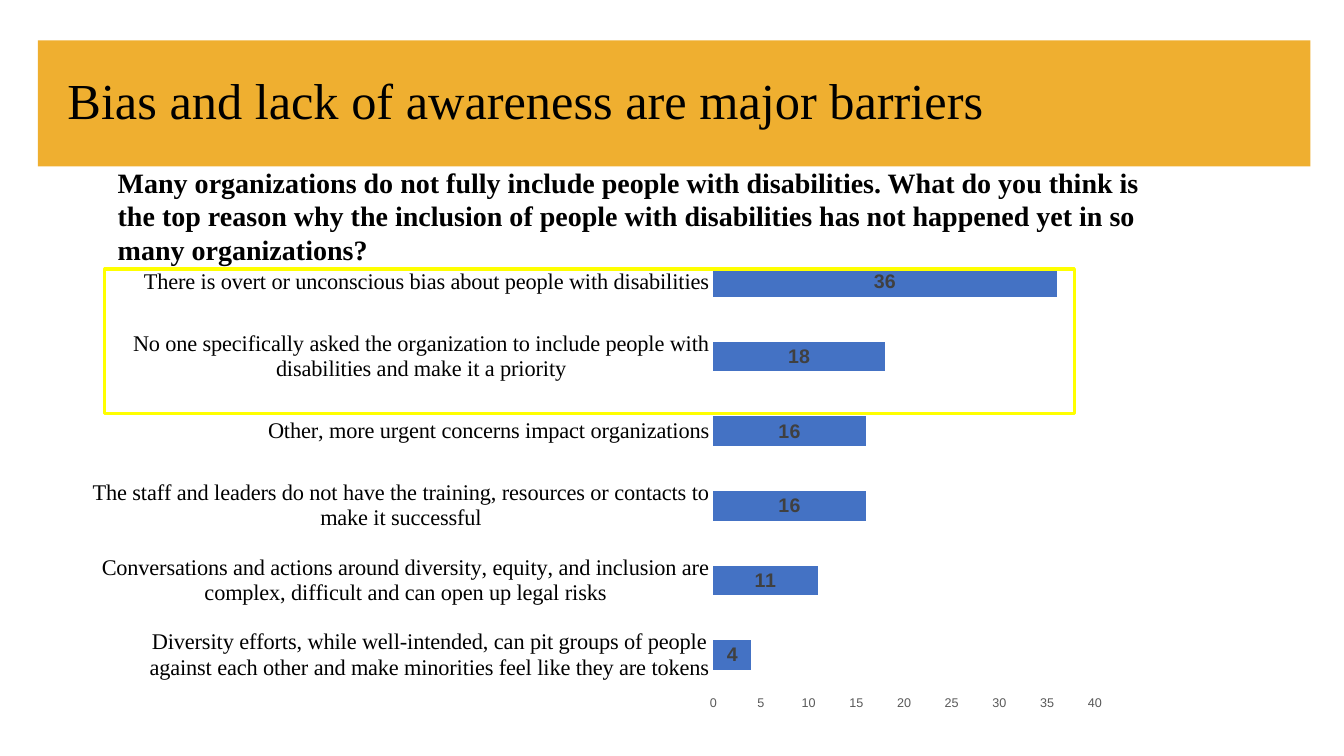
from lxml import etree
from pptx import Presentation
from pptx.chart.data import CategoryChartData
from pptx.dml.color import RGBColor
from pptx.enum.chart import XL_CHART_TYPE, XL_LABEL_POSITION, XL_TICK_MARK
from pptx.enum.shapes import MSO_SHAPE
from pptx.enum.text import MSO_ANCHOR, PP_ALIGN
from pptx.util import Pt

BAR = XL_CHART_TYPE.BAR_STACKED
MID = XL_LABEL_POSITION.CENTER
NONE = XL_TICK_MARK.NONE
RECT = MSO_SHAPE.RECTANGLE
SERIF, SANS = "Times New Roman", "Arial"
HUES = {"band": "EFAF30", "text": "000000", "bar": "4472C4",
        "label": "404040", "axis": "595959", "frame": "FFFF00"}
C_NS = "http://schemas.openxmlformats.org/drawingml/2006/chart"

TITLE = "Bias and lack of awareness are major barriers"
ASK = ("Many organizations do not fully include people with disabilities. "
       "What do you think is the top reason why the inclusion of people with "
       "disabilities has not happened yet in so many organizations?")
VOTES = [
    ("Diversity efforts, while well-intended, can pit groups of people "
     "against each other and make minorities feel like they are tokens", 4),
    ("Conversations and actions around diversity, equity, and inclusion are "
     "complex, difficult and can open up legal risks", 11),
    ("The staff and leaders do not have the training, resources or contacts "
     "to make it successful", 16),
    ("Other, more urgent concerns impact organizations", 16),
    ("No one specifically asked the organization to include people with "
     "disabilities and make it a priority", 18),
    ("There is overt or unconscious bias about people with disabilities", 36),
]


def hue(name):
    return RGBColor.from_string(HUES[name])


def style(font, size, face, color, bold=False):
    font.size, font.name, font.bold = Pt(size), face, bold
    font.color.rgb = hue(color)


def place(shape, x, y, w, h):
    shape.left, shape.top = Pt(x), Pt(y)
    shape.width, shape.height = Pt(w), Pt(h)


def add_rect(slide, x, y, w, h):
    rect = slide.shapes.add_shape(RECT, Pt(x), Pt(y), Pt(w), Pt(h))
    rect.shadow.inherit = False
    return rect


def add_head(slide, x, y, w, h):
    # Band, moved behind the title
    band = add_rect(slide, x, y, w, h)
    band.fill.solid()
    band.fill.fore_color.rgb = hue("band")
    band.line.fill.background()
    slide.shapes._spTree.insert(2, band._element)
    # Title
    title = slide.shapes.title
    place(title, x + 14, y, w - 81, h)
    frame = title.text_frame
    frame.text = TITLE
    frame.vertical_anchor = MSO_ANCHOR.MIDDLE
    para = frame.paragraphs[0]
    para.alignment = PP_ALIGN.LEFT
    para.line_spacing = 0.9
    style(para.runs[0].font, 36, SERIF, "text")


def add_ask(slide, x, y, w, h):
    box = slide.shapes.add_textbox(Pt(x), Pt(y), Pt(w), Pt(h))
    frame = box.text_frame
    frame.word_wrap = True
    frame.margin_right = Pt(92)
    frame.text = ASK
    para = frame.paragraphs[0]
    para._p.get_or_add_pPr().set("marL", str(Pt(36)))
    para.space_after = Pt(12)
    style(para.runs[0].font, 20, SERIF, "text", True)


def fix_plot(chart, **parts):
    # Inner plot area as shares of the chart box
    area = chart._chartSpace.chart.plotArea
    for old in area.findall(f"{{{C_NS}}}layout"):
        area.remove(old)
    layout = etree.Element(f"{{{C_NS}}}layout")
    manual = etree.SubElement(layout, f"{{{C_NS}}}manualLayout")
    rules = {"layoutTarget": "inner", "xMode": "edge", "yMode": "edge", **parts}
    for tag, val in rules.items():
        etree.SubElement(manual, f"{{{C_NS}}}{tag}").set("val", str(val))
    area.insert(0, layout)


def add_bars(slide, x, y, w, h):
    data = CategoryChartData()
    data.categories = [name for name, _ in VOTES]
    data.add_series("Series 1", [val for _, val in VOTES])
    chart = slide.shapes.add_chart(BAR, Pt(x), Pt(y), Pt(w), Pt(h), data).chart
    chart.has_title = chart.has_legend = False
    style(chart.font, 10, SANS, "text")
    fix_plot(chart, x=0.6, y=0.02, w=0.37, h=0.92)
    # Bars and labels
    plot = chart.plots[0]
    plot.gap_width, plot.overlap = 150, 100
    plot.vary_by_categories = False
    fill = plot.series[0].format.fill
    fill.solid()
    fill.fore_color.rgb = hue("bar")
    labels = plot.series[0].data_labels
    labels.show_value = True
    labels.position = MID
    style(labels.font, 14, SANS, "label", True)
    # Axes
    cats, vals = chart.category_axis, chart.value_axis
    for axis in (cats, vals):
        axis.major_tick_mark = axis.minor_tick_mark = NONE
        axis.has_major_gridlines = False
        axis.format.line.fill.background()
    style(cats.tick_labels.font, 16, SERIF, "text")
    style(vals.tick_labels.font, 9, SANS, "axis")
    vals.minimum_scale, vals.maximum_scale, vals.major_unit = 0, 40, 5


def add_frame(slide, x, y, w, h):
    frame = add_rect(slide, x, y, w, h)
    frame.fill.background()
    frame.line.color.rgb = hue("frame")
    frame.line.width = Pt(2.25)


def main():
    deck = Presentation()
    deck.slide_width, deck.slide_height = Pt(960), Pt(540)
    slide = deck.slides.add_slide(deck.slide_layouts[5])
    add_head(slide, 27, 28.8, 909, 90)
    add_ask(slide, 41, 114.5, 878, 80)
    add_bars(slide, 66.2, 167.8, 738, 347.8)
    add_frame(slide, 74.9, 192.2, 692.6, 103)
    deck.save("out.pptx")


if __name__ == "__main__":
    main()
